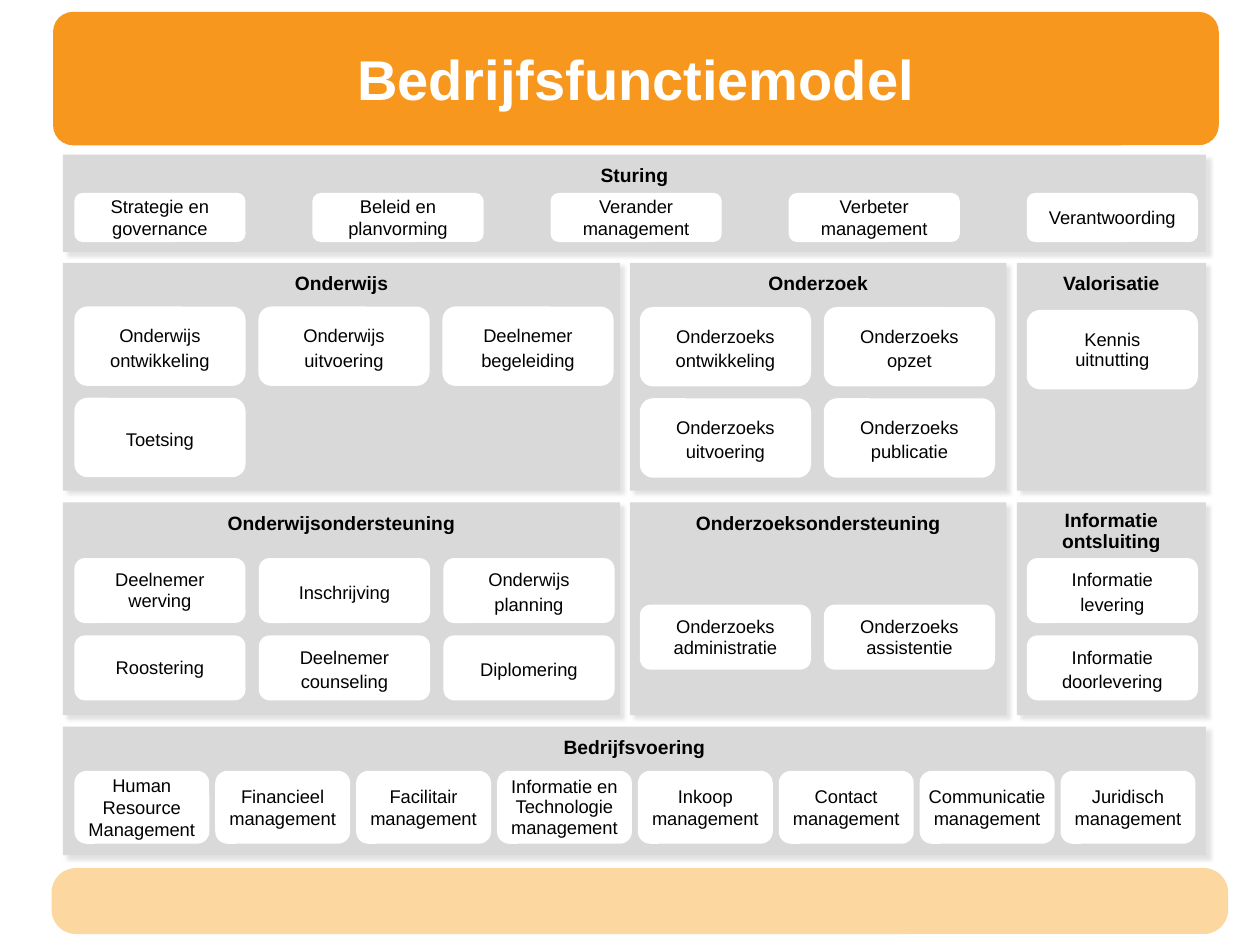
from lxml import etree
from pptx import Presentation
from pptx.dml.color import RGBColor
from pptx.enum.shapes import MSO_SHAPE
from pptx.enum.text import MSO_ANCHOR, PP_ALIGN
from pptx.oxml import parse_xml
from pptx.oxml.ns import qn
from pptx.util import Cm, Pt

RECTANGLE, ROUNDED = MSO_SHAPE.RECTANGLE, MSO_SHAPE.ROUNDED_RECTANGLE
TOP, MIDDLE, CENTER = MSO_ANCHOR.TOP, MSO_ANCHOR.MIDDLE, PP_ALIGN.CENTER

COLORS = {"title": "F8971D", "footer": "FBB040", "panel": "D9D9D9",
          "card": "FFFFFF", "shadow": "BFBFBF", "text": "000000", "light": "FFFFFF"}

# Content: "\v" breaks a line, "\n" starts a paragraph;
# a card may be (text, line spacing) where it differs from its panel
TITLE = "Bedrijfsfunctiemodel"
PANELS = [
    {"name": "Sturing", "column": "all", "band": "steering", "spacing": 12.6,
     "start": (1.5, 3.89), "pitch": (4.8, 0), "size": (3.45, 0.99),
     "cards": [["Strategie en governance", "Beleid en planvorming",
                "Verander\vmanagement", "Verbeter\vmanagement", "Verantwoording"]]},
    {"name": "Onderwijs", "column": "education", "band": "primary", "spacing": 14,
     "start": (1.5, 6.18), "pitch": (3.71, 1.84), "size": (3.45, 1.6),
     "cards": [["Onderwijs\vontwikkeling", "Onderwijs\vuitvoering",
                "Deelnemer\vbegeleiding"], ["Toetsing"]]},
    {"name": "Onderzoek", "column": "research", "band": "primary", "spacing": 14,
     "start": (12.9, 6.19), "pitch": (3.71, 1.84), "size": (3.45, 1.6),
     "cards": [["Onderzoeks\vontwikkeling", "Onderzoeks\vopzet"],
               ["Onderzoeks\vuitvoering", "Onderzoeks\vpublicatie"]]},
    {"name": "Valorisatie", "column": "knowledge", "band": "primary", "spacing": 12,
     "start": (20.7, 6.25), "pitch": (0, 0), "size": (3.45, 1.6),
     "cards": [["Kennis\vuitnutting"]]},
    {"name": "Onderwijsondersteuning", "column": "education", "band": "support",
     "spacing": 14, "start": (1.5, 11.25), "pitch": (3.72, 1.56), "size": (3.45, 1.31),
     "cards": [[("Deelnemer\vwerving", 12), "Inschrijving", "Onderwijs\vplanning"],
               [("Roostering", 12), "Deelnemer\vcounseling", "Diplomering"]]},
    {"name": "Onderzoeksondersteuning", "column": "research", "band": "support",
     "spacing": 12, "start": (12.9, 12.19), "pitch": (3.71, 0), "size": (3.45, 1.31),
     "cards": [["Onderzoeks\vadministratie", "Onderzoeks\vassistentie"]]},
    {"name": "Informatie\vontsluiting", "column": "knowledge", "band": "support",
     "heading_spacing": 12, "spacing": 14,
     "start": (20.7, 11.25), "pitch": (0, 1.56), "size": (3.45, 1.31),
     "cards": [["Informatie\vlevering"], ["Informatie\vdoorlevering"]]},
    {"name": "Bedrijfsvoering", "column": "all", "band": "operations", "spacing": 12.6,
     "start": (1.5, 15.54), "pitch": (2.84, 0), "size": (2.72, 1.47),
     "cards": [["Human Resource Management", "Financieel\nmanagement",
                "Facilitair\nmanagement",
                ("Informatie en Technologie\vmanagement", 11.6),
                "Inkoop\vmanagement", "Contact\vmanagement",
                "Communicatie\vmanagement", "Juridisch\vmanagement"]]},
]

# Panel grid: (left, width) per column and (top, height) per band, in cm
COLUMNS = {"all": (1.27, 23.04), "education": (1.27, 11.23),
           "research": (12.7, 7.59), "knowledge": (20.5, 3.81)}
BANDS = {"steering": (3.12, 1.96), "primary": (5.3, 4.59),
         "support": (10.13, 4.29), "operations": (14.65, 2.59)}

# Text formats: insets are (horizontal, top, bottom) in cm
TITLE_TEXT = {"font": {"size": Pt(32), "bold": True}, "color": "light",
              "anchor": MIDDLE, "insets": (0, 0, 0)}
PANEL_TEXT = {"font": {"size": Pt(11), "bold": True}, "color": "text",
              "anchor": TOP, "insets": (0.25, 0.15, 0.13)}
CARD_TEXT = {"font": {"size": Pt(10.5), "bold": False}, "color": "text",
             "anchor": MIDDLE, "insets": (0.1, 0.13, 0.13)}


def add_box(slide, kind, box, color):
    shape = slide.shapes.add_shape(kind, *[Cm(length) for length in box])
    shape.shadow.inherit = False
    shape.fill.solid()
    shape.fill.fore_color.rgb = RGBColor.from_string(COLORS[color])
    shape.line.fill.background()
    return shape


def write(shape, text, style, spacing=None):
    frame = shape.text_frame
    side, top, bottom = style["insets"]
    layout = {"word_wrap": True, "vertical_anchor": style["anchor"],
              "margin_left": Cm(side), "margin_right": Cm(side),
              "margin_top": Cm(top), "margin_bottom": Cm(bottom)}
    for name, value in layout.items():
        setattr(frame, name, value)
    frame.text = text
    for paragraph in frame.paragraphs:
        paragraph.alignment = CENTER
        if spacing:
            paragraph.line_spacing = Pt(spacing)
        # The paragraph font also sizes the line breaks
        for font in [paragraph.font] + [run.font for run in paragraph.runs]:
            for name, value in {"name": "Arial", **style["font"]}.items():
                setattr(font, name, value)
            font.color.rgb = RGBColor.from_string(COLORS[style["color"]])


def add_shadow(shape):
    effects = shape.element.spPr.find(qn("a:effectLst"))
    effects.append(parse_xml(
        '<a:outerShdw xmlns:a="http://schemas.openxmlformats.org/drawingml/2006/main" '
        f'blurRad="{Pt(2)}" dist="{Pt(3)}" dir="2700000" algn="tl" rotWithShape="0">'
        f'<a:srgbClr val="{COLORS["shadow"]}"><a:alpha val="43000"/></a:srgbClr>'
        '</a:outerShdw>'))


def add_panel(slide, panel):
    left, width = COLUMNS[panel["column"]]
    top, height = BANDS[panel["band"]]
    shape = add_box(slide, RECTANGLE, (left, top, width, height), "panel")
    add_shadow(shape)
    write(shape, panel["name"], PANEL_TEXT, panel.get("heading_spacing", 14))

    # Cards on the grid of the panel
    (start_x, start_y), (step_x, step_y) = panel["start"], panel["pitch"]
    for row, cards in enumerate(panel["cards"]):
        for column, card in enumerate(cards):
            text, spacing = card if isinstance(card, tuple) else (card, panel["spacing"])
            box = (start_x + column * step_x, start_y + row * step_y, *panel["size"])
            write(add_box(slide, ROUNDED, box, "card"), text, CARD_TEXT, spacing)


def main():
    presentation = Presentation()
    presentation.slide_width, presentation.slide_height = Cm(25.4), Cm(19.05)
    slide = presentation.slides.add_slide(presentation.slide_layouts[6])

    # Half-transparent footer bar
    footer = add_box(slide, ROUNDED, (1.04, 17.5, 23.72, 1.33), "footer")
    footer.adjustments[0] = 0.37
    color = footer.element.spPr.find(".//" + qn("a:srgbClr"))
    etree.SubElement(color, qn("a:alpha")).set("val", "50000")

    # Title bar
    title = add_box(slide, ROUNDED, (1.07, 0.24, 23.5, 2.69), "title")
    title.adjustments[0] = 0.15
    write(title, TITLE, TITLE_TEXT)

    for panel in PANELS:
        add_panel(slide, panel)
    presentation.save("out.pptx")


if __name__ == "__main__":
    main()
